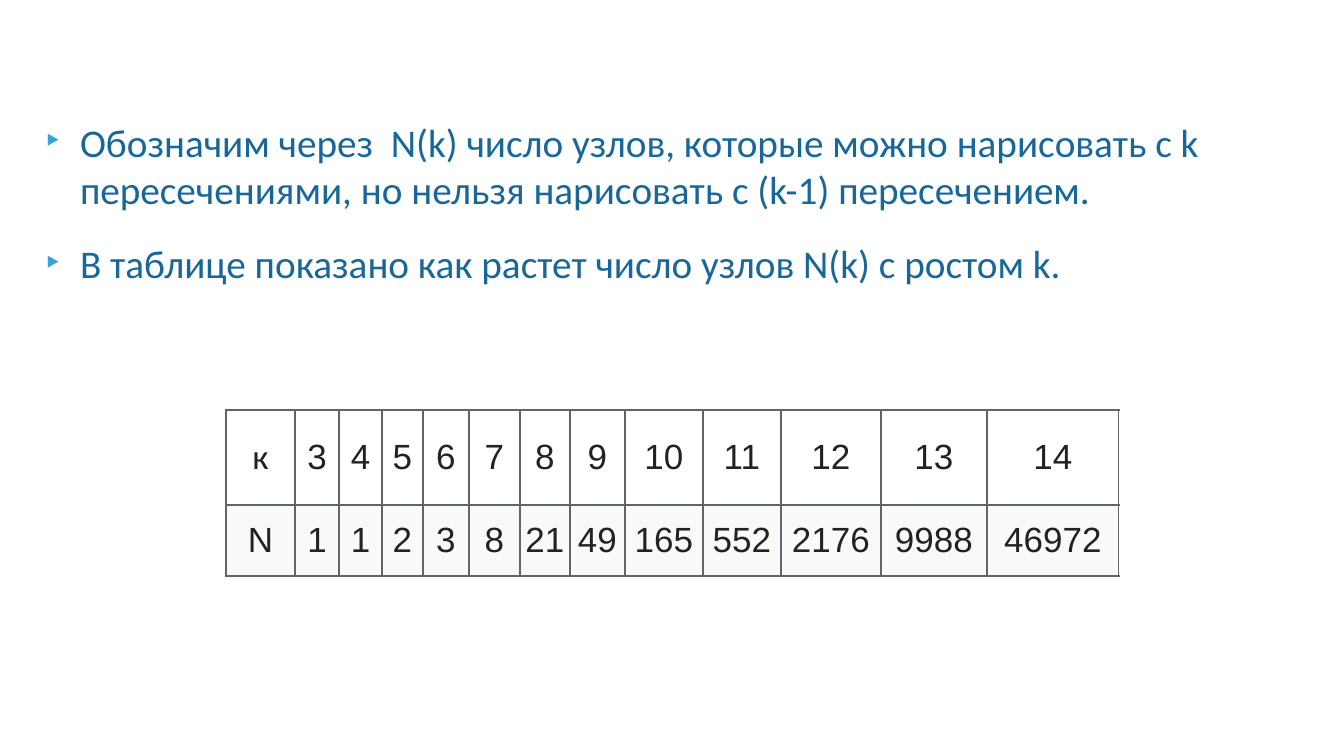
from dataclasses import dataclass

from lxml.etree import SubElement
from pptx import Presentation
from pptx.dml.color import RGBColor
from pptx.enum.text import MSO_ANCHOR, MSO_AUTO_SIZE, PP_ALIGN
from pptx.oxml.ns import qn
from pptx.util import Emu, Pt

# Content
STATEMENTS = [
    "Обозначим через  N(k) число узлов, которые можно нарисовать с k "
    "пересечениями, но нельзя нарисовать с (k-1) пересечением.",
    "В таблице показано как растет число узлов N(k) с ростом k.",
]
KNOT_ROWS = [
    ["к", "3", "4", "5", "6", "7", "8", "9", "10", "11", "12", "13", "14"],
    ["N", "1", "1", "2", "3", "8", "21", "49", "165", "552", "2176", "9988", "46972"],
]

# Geometry in px
SLIDE_SIZE = (1344, 756)
BODY_BOX = (42, 115, 1260, 196)
TABLE_ORIGIN = (226, 410)
COLUMN_WIDTHS = [69, 44, 43, 41, 46, 51, 50, 55, 78, 78, 100, 106, 132]
ROW_HEIGHTS = [95, 71]
INSET = 3
BULLET_INDENT = 35


@dataclass(frozen=True)
class Theme:
    body_color: str = "18679A"
    bullet_color: str = "39A3D5"
    cell_color: str = "222222"
    border_color: str = "5F6568"
    band_color: str = "DCDEE0"
    band_opacity: int = 18
    body_font: str = "Calibri"
    number_font: str = "Arial"
    body_size: int = 56
    cell_size: int = 50
    body_gap: int = 39
    cell_gap: int = 34
    bullet_percent: int = 105
    border_width: int = 2


THEME = Theme()


def px(value):
    return Emu(round(value * 914400 / 50.4))


def write(paragraph, text, *, font, size, color, gap, align=PP_ALIGN.LEFT):
    paragraph.alignment = align
    paragraph.space_before = Pt(gap)
    paragraph.line_spacing = 1.0
    run = paragraph.add_run()
    run.text = text
    run.font.name = font
    run.font.size = Pt(size)
    run.font.color.rgb = RGBColor.from_string(color)


def add_bullet(paragraph):
    properties = paragraph._p.get_or_add_pPr()
    properties.set("marL", str(px(BULLET_INDENT)))
    properties.set("indent", str(-px(BULLET_INDENT)))
    color = SubElement(properties, qn("a:buClr"))
    SubElement(color, qn("a:srgbClr"), val=THEME.bullet_color)
    SubElement(properties, qn("a:buSzPct"), val=str(THEME.bullet_percent * 1000))
    SubElement(properties, qn("a:buFont"), typeface=THEME.number_font)
    SubElement(properties, qn("a:buChar"), char="‣")


def set_margins(target):
    for side in ("left", "top", "right", "bottom"):
        setattr(target, f"margin_{side}", px(INSET))


def style_cell(cell, banded):
    set_margins(cell)
    cell.vertical_anchor = MSO_ANCHOR.MIDDLE
    properties = cell._tc.get_or_add_tcPr()
    for edge in ("a:lnL", "a:lnR", "a:lnT", "a:lnB"):
        line = SubElement(properties, qn(edge), w=str(Pt(THEME.border_width)))
        fill = SubElement(line, qn("a:solidFill"))
        SubElement(fill, qn("a:srgbClr"), val=THEME.border_color)
    if banded:
        cell.fill.solid()
        cell.fill.fore_color.rgb = RGBColor.from_string(THEME.band_color)
        color = properties.find(qn("a:solidFill")).find(qn("a:srgbClr"))
        SubElement(color, qn("a:alpha"), val=str(THEME.band_opacity * 1000))
    else:
        cell.fill.background()


def add_statements(slide):
    body = slide.placeholders[1]
    body.left, body.top, body.width, body.height = map(px, BODY_BOX)
    frame = body.text_frame
    frame.word_wrap = True
    frame.auto_size = MSO_AUTO_SIZE.NONE
    frame.vertical_anchor = MSO_ANCHOR.TOP
    set_margins(frame)
    for index, text in enumerate(STATEMENTS):
        paragraph = frame.add_paragraph() if index else frame.paragraphs[0]
        write(paragraph, text, font=THEME.body_font, size=THEME.body_size,
              color=THEME.body_color, gap=THEME.body_gap)
        add_bullet(paragraph)


def add_knot_table(slide):
    size = (sum(COLUMN_WIDTHS), sum(ROW_HEIGHTS))
    table = slide.shapes.add_table(len(ROW_HEIGHTS), len(COLUMN_WIDTHS),
                                   *map(px, TABLE_ORIGIN + size)).table
    table.first_row = table.horz_banding = False
    for column, width in zip(table.columns, COLUMN_WIDTHS):
        column.width = px(width)
    for row, height in zip(table.rows, ROW_HEIGHTS):
        row.height = px(height)
    for row_index, values in enumerate(KNOT_ROWS):
        for column_index, value in enumerate(values):
            cell = table.cell(row_index, column_index)
            style_cell(cell, banded=row_index == 1)
            font = THEME.body_font if value == "к" else THEME.number_font
            write(cell.text_frame.paragraphs[0], value, font=font,
                  size=THEME.cell_size, color=THEME.cell_color,
                  gap=THEME.cell_gap, align=PP_ALIGN.CENTER)


def main():
    presentation = Presentation()
    presentation.slide_width, presentation.slide_height = map(px, SLIDE_SIZE)
    slide = presentation.slides.add_slide(presentation.slide_layouts[1])
    # The slide has no title
    title = slide.shapes.title.element
    title.getparent().remove(title)
    add_statements(slide)
    add_knot_table(slide)
    presentation.save("out.pptx")


if __name__ == "__main__":
    main()
